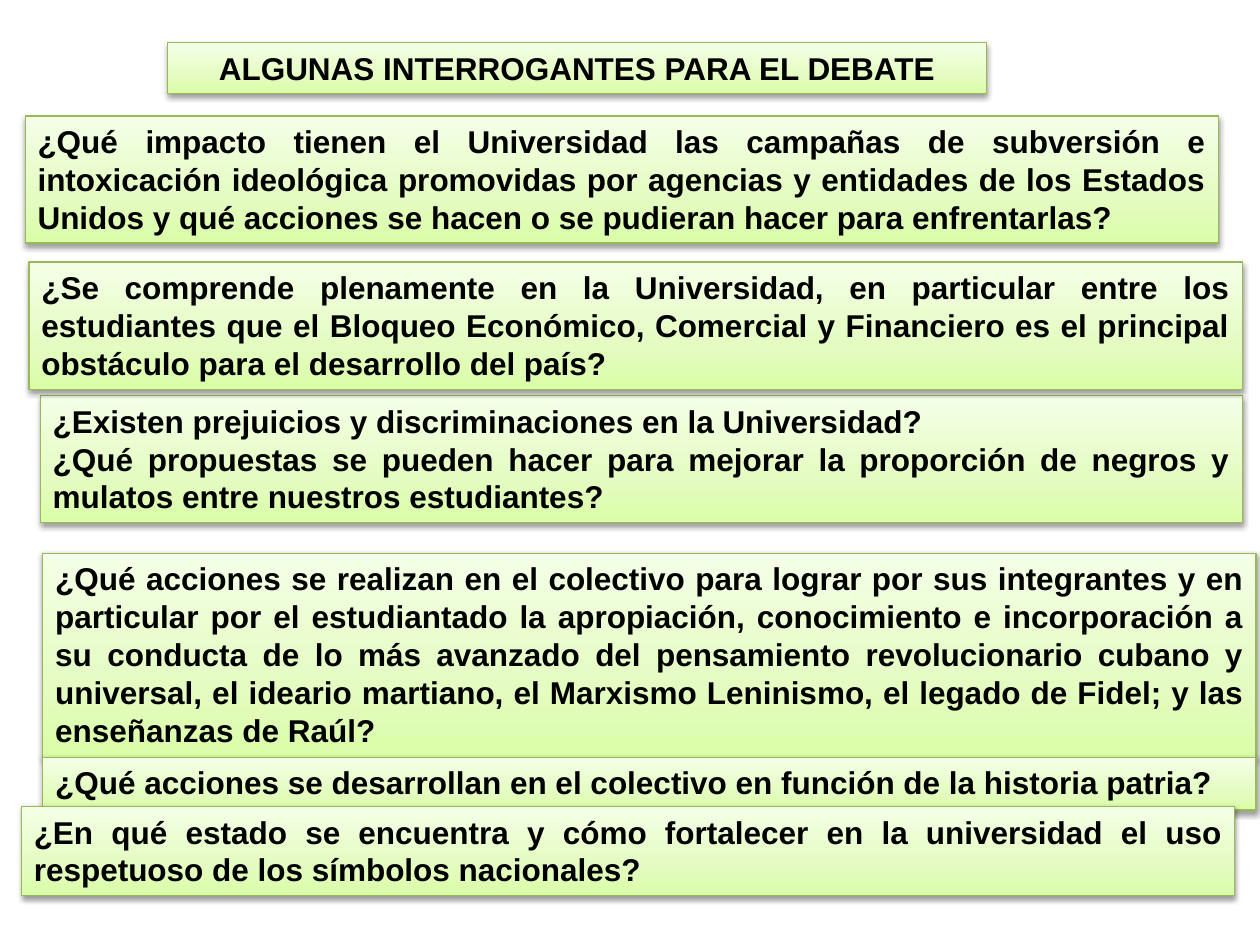
"""Build a slide of green boxes with questions for debate."""
from copy import deepcopy

from lxml import etree
from pptx import Presentation
from pptx.dml.color import RGBColor
from pptx.enum import shapes, text
from pptx.oxml import ns
from pptx import util as u

COLORS = {"low": "DAFDA7", "mid": "E4FCC2", "high": "F5FFE7",
          "edge": "98B955", "ink": "000000"}
STOPS = [("low", 0), ("mid", 0.35), ("high", 1)]
LEFT, MID, JUST = (text.PP_ALIGN.LEFT, text.PP_ALIGN.CENTER,
                   text.PP_ALIGN.JUSTIFY)

BOXES = [
    ((1.33, 0.34, 6.5, 0.4), [(MID, "ALGUNAS INTERROGANTES PARA EL DEBATE")]),
    ((0.2, 0.92, 9.47, 1.01), [
        (JUST, "¿Qué impacto tienen el Universidad las campañas de subversión "
               "e intoxicación ideológica promovidas por agencias y entidades "
               "de los Estados Unidos y qué acciones se hacen o se pudieran "
               "hacer para enfrentarlas?")]),
    ((0.32, 3.14, 9.54, 1.01), [
        (LEFT, "¿Existen prejuicios y discriminaciones en la Universidad?"),
        (JUST, "¿Qué propuestas se pueden hacer para mejorar la proporción de "
               "negros y mulatos entre nuestros estudiantes?")]),
    ((0.34, 4.39, 9.63, 1.62), [
        (JUST, "¿Qué acciones se realizan en el colectivo para lograr por sus "
               "integrantes y en particular por el estudiantado la "
               "apropiación, conocimiento e incorporación a su conducta de lo "
               "más avanzado del pensamiento revolucionario cubano y "
               "universal, el ideario martiano, el Marxismo Leninismo, el "
               "legado de Fidel; y las enseñanzas de Raúl?")]),
    ((0.34, 6.01, 9.63, 0.42), [
        (JUST, "¿Qué acciones se desarrollan en el colectivo en función de la "
               "historia patria?")]),
    ((0.17, 6.4, 9.63, 0.71), [
        (JUST, "¿En qué estado se encuentra y cómo fortalecer en la "
               "universidad el uso respetuoso de los símbolos nacionales?")]),
    ((0.23, 2.08, 9.63, 1.01), [
        (JUST, "¿Se comprende plenamente en la Universidad, en particular "
               "entre los estudiantes que el Bloqueo Económico, Comercial y "
               "Financiero es el principal obstáculo para el desarrollo del "
               "país?")]),
]


class Deck:
    """Hold the style and the current slide."""

    def __init__(self, font, size):
        """Start a deck with one blank slide."""
        self.font, self.size = font, u.Pt(size)
        self.prs = Presentation()
        self.prs.slide_width, self.prs.slide_height = u.Inches(10), u.Inches(7.5)
        self.slide = self.prs.slides.add_slide(self.prs.slide_layouts[6])

    def color(self, name):
        """Return a named colour."""
        return RGBColor.from_string(COLORS[name])

    def fade(self, shape):
        """Fill a shape with the green gradient."""
        shape.fill.gradient()
        shape.fill.gradient_angle = 90
        stops = shape._element.spPr.find(".//" + ns.qn("a:gsLst"))
        stops.append(deepcopy(stops[0]))
        for stop, (name, place) in zip(shape.fill.gradient_stops, STOPS):
            stop.color.rgb = self.color(name)
            stop.position = place

    def shade(self, shape):
        """Give a shape a soft shadow below it."""
        shape.shadow.inherit = False
        effects = shape._element.spPr.find(ns.qn("a:effectLst"))
        drop = etree.SubElement(effects, ns.qn("a:outerShdw"), blurRad="40000",
                                dist="20000", dir="5400000", rotWithShape="0")
        tint = etree.SubElement(drop, ns.qn("a:srgbClr"), val=COLORS["ink"])
        etree.SubElement(tint, ns.qn("a:alpha"), val="38000")

    def label(self, frame, paras):
        """Put aligned paragraphs into a text frame."""
        frame.word_wrap = True
        frame.auto_size = text.MSO_AUTO_SIZE.SHAPE_TO_FIT_TEXT
        frame.vertical_anchor = text.MSO_ANCHOR.TOP
        for i, (align, words) in enumerate(paras):
            para = frame.add_paragraph() if i else frame.paragraphs[0]
            para.alignment = align
            run = para.add_run()
            run.text = words
            run.font.name, run.font.size = self.font, self.size
            run.font.bold = True
            run.font.color.rgb = self.color("ink")

    def box(self, place, paras):
        """Add a green box with text."""
        shape = self.slide.shapes.add_shape(
            shapes.MSO_SHAPE.RECTANGLE, *map(u.Inches, place))
        self.fade(shape)
        shape.line.color.rgb = self.color("edge")
        shape.line.width = u.Pt(0.75)
        self.shade(shape)
        self.label(shape.text_frame, paras)


def main():
    """Build and save the deck."""
    deck = Deck("Arial", 18)
    for place, paras in BOXES:
        deck.box(place, paras)
    deck.prs.save("out.pptx")


if __name__ == "__main__":
    main()
